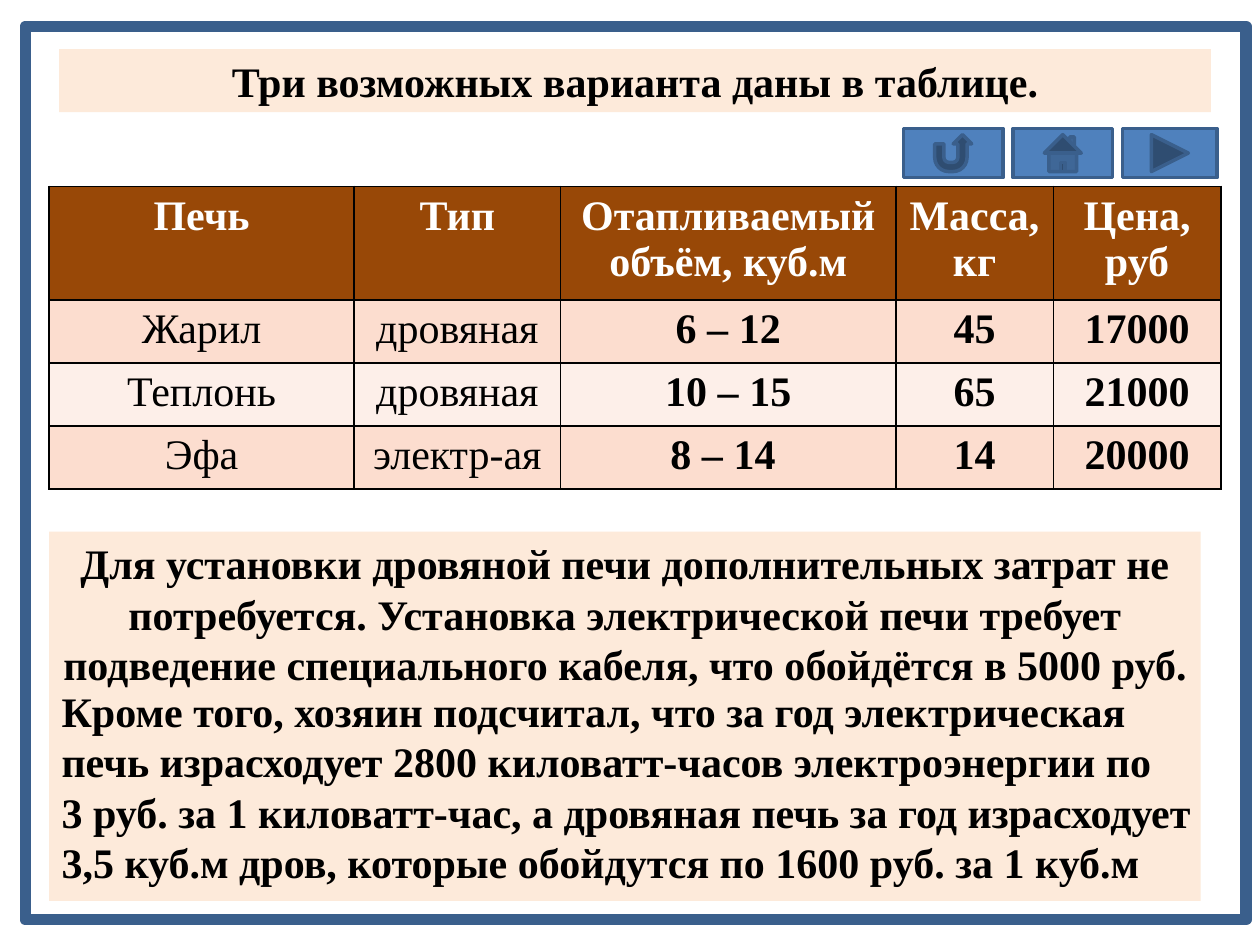
from lxml.etree import SubElement
from pptx import Presentation
from pptx.dml.color import RGBColor
from pptx.enum.shapes import MSO_SHAPE as SHAPE
from pptx.enum.text import MSO_ANCHOR, MSO_AUTO_SIZE, PP_ALIGN
from pptx.oxml.ns import qn
from pptx.util import Inches, Pt

FONT, SIZE = "Times New Roman", 24
BLACK, WHITE, BLUE, NAVY = "000000", "FFFFFF", "4F81BD", "3A5F8C"
PEACH, BROWN, BANDS = "FDEADA", "984807", ("FCDDCF", "FDEFE9")

TITLE = "Три возможных варианта даны в таблице."
STOVES = [
    ["Печь", "Тип", "Отапливаемый объём, куб.м", "Масса, кг", "Цена, руб"],
    ["Жарил", "дровяная", "6 – 12", "45", "17000"],
    ["Теплонь", "дровяная", "10 – 15", "65", "21000"],
    ["Эфа", "электр-ая", "8 – 14 ", "14", "20000"],
]
COLUMNS = (2.42, 1.64, 2.66, 1.25, 1.33)
ROWS = (0.9, 0.5, 0.5, 0.5)
INSTALLATION = (
    "Для установки дровяной печи дополнительных затрат не потребуется. "
    "Установка электрической печи требует подведение специального кабеля, "
    "что обойдётся в 5000 руб."
)
RUNNING_COSTS = [
    "Кроме того, хозяин подсчитал, что за год электрическая",
    "печь израсходует 2800 киловатт-часов электроэнергии по",
    "3 руб. за 1 киловатт-час, а дровяная печь за год израсходует",
    "3,5 куб.м дров, которые обойдутся по 1600 руб. за 1 куб.м",
]


def color(value):
    return RGBColor.from_string(value)


def inches(box):
    return [Inches(length) for length in box]


def write(frame, lines, align, ink=BLACK, bold=True, spacing=None):
    frame.text = "\n".join(lines)
    for para in frame.paragraphs:
        para.alignment = align
        para.line_spacing = spacing
        for span in para.runs:
            font = span.font
            font.name, font.size, font.bold = FONT, Pt(SIZE), bold
            font.color.rgb = color(ink)


def add_block(page, kind, box, fill, line=None, width=0):
    shape = page.shapes.add_shape(kind, *inches(box))
    shape.shadow.inherit = False
    shape.fill.solid()
    shape.fill.fore_color.rgb = color(fill)
    if line:
        shape.line.color.rgb = color(line)
        shape.line.width = Pt(width)
    else:
        shape.line.fill.background()
    return shape


def add_frame(page, box, gap=0.08):
    """Blue border with a white sheet inset by the gap."""
    left, top, width, height = box
    border = add_block(page, SHAPE.RECTANGLE, box, WHITE, NAVY, 6.5)
    tint = border.fill._xPr.find(qn("a:solidFill"))[0]
    SubElement(tint, qn("a:alpha"), val="73000")
    sheet = (left + gap, top + gap, width - 2 * gap, height - 2 * gap)
    add_block(page, SHAPE.RECTANGLE, sheet, WHITE)


def add_panel(page, box, text):
    frame = add_block(page, SHAPE.RECTANGLE, box, PEACH).text_frame
    frame.word_wrap = True
    frame.vertical_anchor = MSO_ANCHOR.TOP
    write(frame, [text], PP_ALIGN.CENTER, spacing=Pt(1.2 * SIZE))


def add_lines(page, box, lines):
    frame = page.shapes.add_textbox(*inches(box)).text_frame
    frame.word_wrap = False
    frame.auto_size = MSO_AUTO_SIZE.SHAPE_TO_FIT_TEXT
    write(frame, lines, PP_ALIGN.LEFT, spacing=Pt(1.2 * SIZE))


def add_borders(cell):
    # Borders come before the fill in the cell properties
    props = cell._tc.get_or_add_tcPr()
    for index, side in enumerate(("lnL", "lnR", "lnT", "lnB")):
        line = SubElement(props, qn(f"a:{side}"), w=str(Pt(1)))
        ink = SubElement(line, qn("a:solidFill"))
        SubElement(ink, qn("a:srgbClr"), val=BLACK)
        props.insert(index, line)


def add_stove_table(page, left, top):
    box = (left, top, sum(COLUMNS), sum(ROWS))
    table = page.shapes.add_table(len(ROWS), len(COLUMNS), *inches(box)).table
    for column, width in zip(table.columns, COLUMNS):
        column.width = Inches(width)
    for r, (row, height) in enumerate(zip(table.rows, ROWS)):
        row.height = Inches(height)
        for c, cell in enumerate(row.cells):
            header = r == 0
            cell.fill.solid()
            cell.fill.fore_color.rgb = color(BROWN if header else BANDS[(r - 1) % 2])
            add_borders(cell)
            write(cell.text_frame, [STOVES[r][c]], PP_ALIGN.CENTER,
                  WHITE if header else BLACK, header or c > 1)


def add_navigation(page, left, top, step=0.87, height=0.39):
    buttons = (
        (SHAPE.ACTION_BUTTON_RETURN, 0.79),
        (SHAPE.ACTION_BUTTON_HOME, 0.79),
        (SHAPE.ACTION_BUTTON_FORWARD_OR_NEXT, 0.75),
    )
    for index, (kind, width) in enumerate(buttons):
        add_block(page, kind, (left + index * step, top, width, height), BLUE, NAVY, 2)


def main():
    deck = Presentation()
    deck.slide_width, deck.slide_height = Inches(10), Inches(7.5)
    page = deck.slides.add_slide(deck.slide_layouts[6])
    margin, panel_width = 0.39, 9.14

    add_frame(page, (0.2, 0.21, 9.69, 7.09))
    add_panel(page, (0.47, margin, panel_width, 0.5), TITLE)
    add_panel(page, (margin, 4.22, panel_width, 2.93), INSTALLATION)
    add_stove_table(page, margin, 1.48)
    add_navigation(page, 7.17, 1.02)
    add_lines(page, (margin, 5.39, 9.25, 1.72), RUNNING_COSTS)

    deck.save("out.pptx")


if __name__ == "__main__":
    main()
